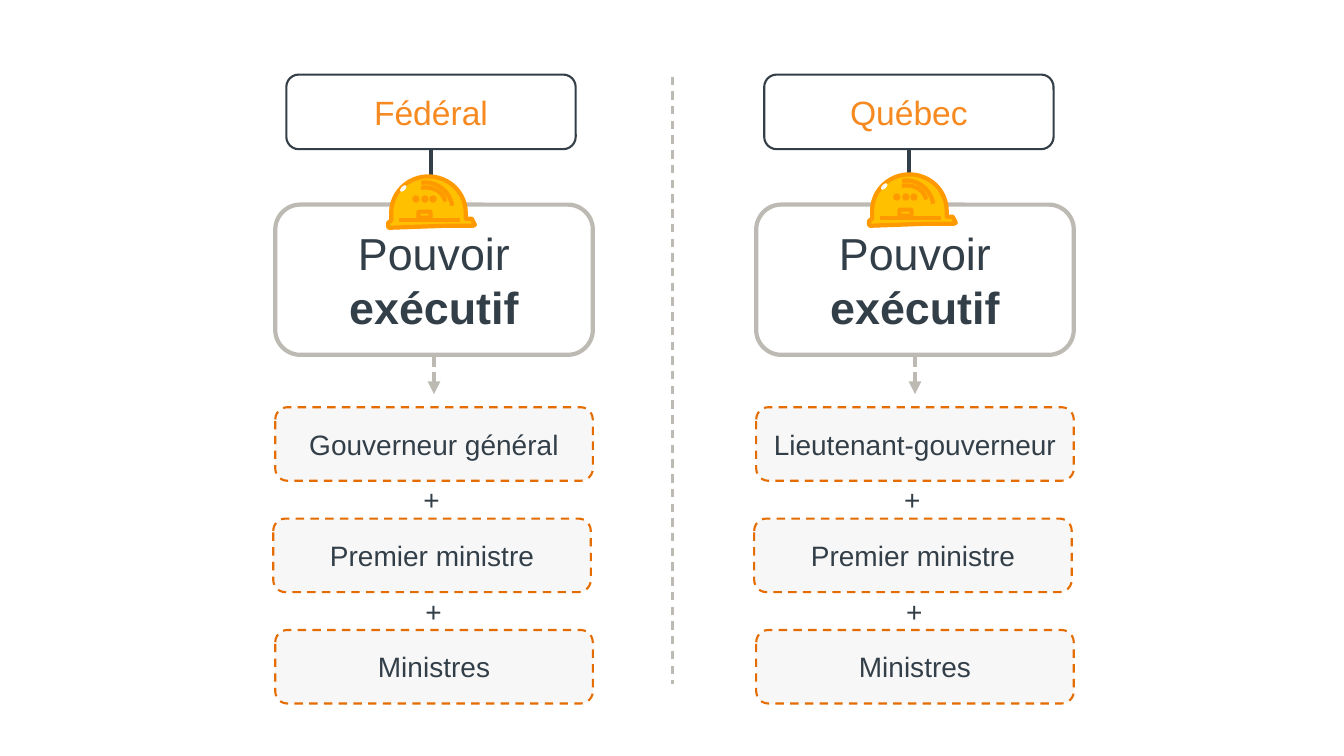
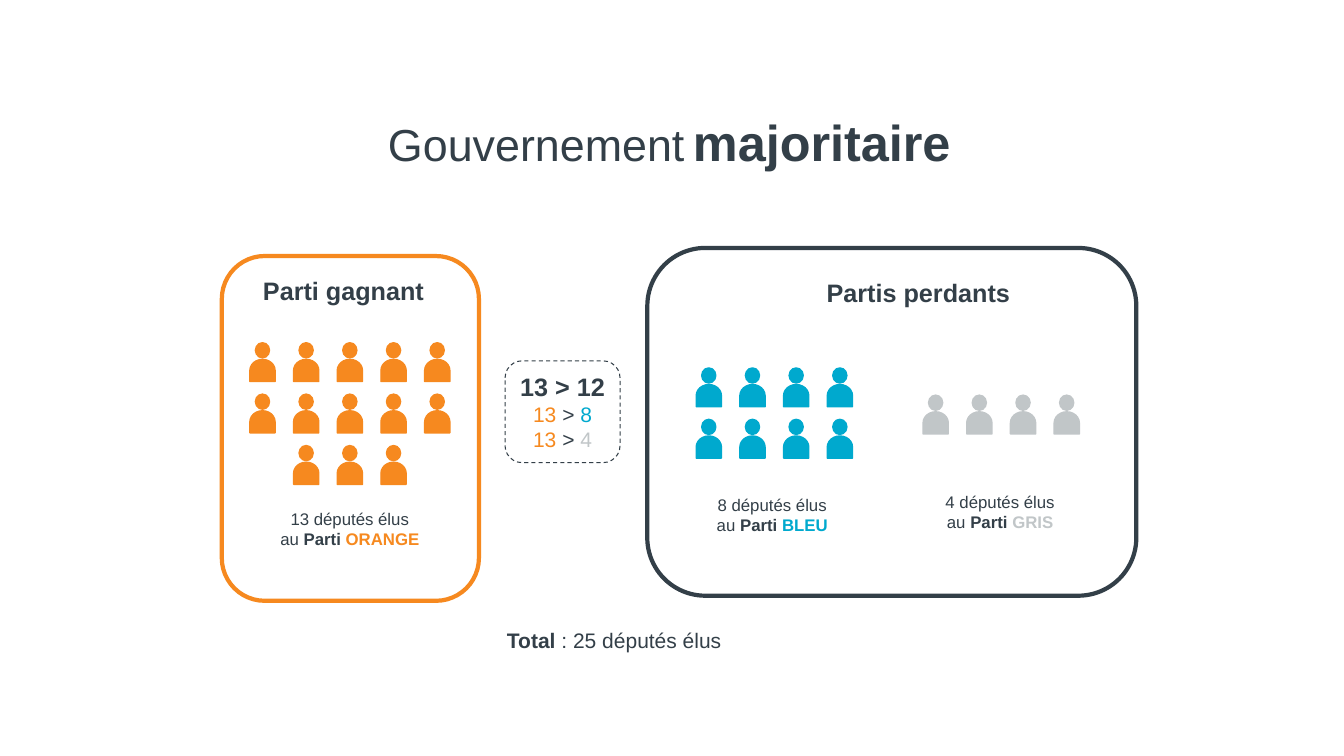
from math import cos, sin, pi
from pptx import Presentation
from pptx.dml.color import RGBColor as RGB
from pptx.enum.dml import MSO_LINE as DASH
from pptx.enum.shapes import MSO_CONNECTOR as CONN, MSO_SHAPE as SHAPE
from pptx.enum.text import MSO_ANCHOR as ANCHOR, PP_ALIGN as ALIGN
from pptx.oxml.ns import qn
from pptx.util import Inches, Pt
from lxml.etree import SubElement

INK = {"dark": "333F48", "orange": "F6891F", "rust": "E46C00", "stone": "BCBAB3",
       "pale": "F7F7F7", "white": "FFFFFF", "blue": "00A9CE", "gray": "C1C6C8",
       "gold": "FFC000", "amber": "FF9900"}
FONT = "Arial"


def box(slide, kind, at, fill=None, line=None, width=1, dash=None, rot=0,
        text=(), size=12, color="dark", align=ALIGN.CENTER, wrap=True):
    at = [Inches(v) for v in at]
    if kind is None:
        shape = slide.shapes.add_textbox(*at)
    else:
        shape = slide.shapes.add_shape(kind, *at)
        shape.shadow.inherit = False
        shape.rotation = rot
        if fill:
            shape.fill.solid()
            shape.fill.fore_color.rgb = RGB.from_string(INK[fill])
        else:
            shape.fill.background()
        if line:
            shape.line.color.rgb = RGB.from_string(INK[line])
            shape.line.width = Pt(width)
            if dash:
                shape.line.dash_style = dash
        else:
            shape.line.fill.background()
    if text:
        frame = shape.text_frame
        frame.word_wrap = wrap
        frame.vertical_anchor = ANCHOR.MIDDLE if kind else ANCHOR.TOP
        for i, runs in enumerate(text):
            para = frame.add_paragraph() if i else frame.paragraphs[0]
            para.alignment = align
            para.font.name = FONT
            para.font.color.rgb = RGB.from_string(INK[color])
            sizes = {run[3] for run in runs if len(run) > 3}
            if not sizes:
                para.font.size = Pt(size)
            elif len(runs) == 1:
                para.font.size = Pt(sizes.pop())
            bolds = {len(run) > 1 and run[1] for run in runs}
            if len(bolds) == 1:
                para.font.bold = bolds.pop()
            for word, bold, tint, pts in ((*run, None, None, None)[:4] for run in runs):
                run = para.add_run()
                run.text = word
                if bold and len(runs) > 1:
                    run.font.bold = True
                if tint:
                    run.font.color.rgb = RGB.from_string(INK[tint])
                if sizes and len(runs) > 1:
                    run.font.size = Pt(pts or size)
    return shape


def link(slide, start, end, color, width=3, dash=None, arrow=False, top=None):
    line = slide.shapes.add_connector(CONN.STRAIGHT, *[Inches(v) for v in (*start, *end)])
    if top is not None:
        line.begin_connect(top, 2)
    line.line.color.rgb = RGB.from_string(INK[color])
    line.line.width = Pt(width)
    if dash:
        line.line.dash_style = dash
    if arrow:
        SubElement(line.line._get_or_add_ln(), qn("a:tailEnd"), type="triangle")
    SubElement(line._element.spPr, qn("a:effectLst"))


prs = Presentation()
prs.slide_width, prs.slide_height = Inches(13.33), Inches(7.5)
blank = prs.slide_layouts[6]
ROUND, OVAL = SHAPE.ROUNDED_RECTANGLE, SHAPE.OVAL

power = prs.slides.add_slide(blank)
link(power, (6.67, 0.76), (6.67, 6.79), "stone", 1.5, DASH.DASH)

levels = [("Fédéral", 2.73, 2.84, "Gouverneur général"),
          ("Québec", 7.5, 7.58, "Lieutenant-gouverneur")]
for i, (name, left, head_x, chief) in enumerate(levels):
    mid = left + 3.15 / 2
    card = box(power, ROUND, (left, 2.03, 3.15, 1.49), "white", "stone", 3, size=32,
               text=[[("Pouvoir",)], [("exécutif", True)]])
    link(power, (mid, 3.52), (mid, 3.91), "stone", 3, DASH.SQUARE_DOT, True, card)

    for row, role in enumerate((chief, "Premier ministre", "Ministres")):
        y = 4.04 + row * 2.21 / 2
        x = left - 0.02 * (row == 1)
        box(power, ROUND, (x, y, 3.15, 0.73), "pale", "rust", 1.5, DASH.DASH,
            text=[[(role,)]], size=20)
        if row < 2:
            box(power, None, (left + 1.37 + 0.02 * row, y + 0.7, 0.36, 0.44),
                text=[[("+",)]], size=20, align=ALIGN.LEFT)

    head = box(power, ROUND, (head_x, 0.74, 2.87, 0.74), "white", "dark", 1.5,
               text=[[(name,)]], size=24, color="orange")
    stem = head_x + 2.87 / 2
    link(power, (stem, 1.48), (stem, 1.87), "dark", 3, arrow=True, top=head)

    dx, dy = 4.77 * i, -0.02 * i
    dome = [(4.25 - 0.37 * cos(pi * k / 24), 2.11 - 0.36 * sin(pi * k / 24))
            for k in range(25)]
    brim = [(4.62, 2.17), (4.68, 2.17), (4.71, 2.23), (4.69, 2.24), (4.42, 2.24),
            (4.14, 2.25), (3.86, 2.26), (3.85, 2.25), (3.85, 2.21), (3.88, 2.19)]
    edge = [(Inches(x + dx), Inches(y + dy)) for x, y in dome + brim]
    pen = power.shapes.build_freeform(*edge[0])
    pen.add_line_segments(edge[1:])
    hat = pen.convert_to_shape()
    hat.shadow.inherit = False
    hat.fill.solid()
    hat.fill.fore_color.rgb = RGB.from_string(INK["gold"])
    hat.line.color.rgb = RGB.from_string(INK["amber"])
    hat.line.width = Pt(3)

    link(power, (4.56 + dx, 2.18 + dy), (3.96 + dx, 2.18 + dy), "amber")
    parts = [(SHAPE.ARC, 3.96, 1.81, 0.53, 0.55, None, "amber", -9.6),
             (SHAPE.ARC, 3.99, 1.86, 0.43, 0.35, None, "amber", -9.6),
             (ROUND, 4.15, 2.1, 0.12, 0.06, "gold", "amber", 0),
             (OVAL, 3.98, 1.83, 0.04, 0.08, "white", None, 45)]
    parts += [(OVAL, x, 1.96, 0.03, 0.03, "gold", "amber", 0) for x in (4.11, 4.2, 4.28)]
    for kind, x, y, w, h, fill, line, rot in parts:
        box(power, kind, (x + dx, y + dy, w, h), fill, line, 3, rot=rot)

vote = prs.slides.add_slide(blank)
box(vote, ROUND, (6.42, 2.46, 4.85, 3.45), None, "dark", 3)
box(vote, ROUND, (2.2, 2.54, 2.55, 3.42), "white", "orange", 3)

labels = [
    ((3.75, 1.05, 5.83, 1.06), 32,
     [("Gouvernement",), (" ", False, None, 21), ("majoritaire", True, None, 36)]),
    ((2.51, 2.68, 1.81, 0.4), 18, [("Parti gagnant", True)]),
    ((8.1, 2.7, 2.04, 0.4), 18, [("Partis perdants", True)]),
    ((4.93, 6.18, 2.55, 0.35), 15, [("Total", True), (" : 25 députés élus",)])]
for at, size, runs in labels:
    box(vote, None, at, text=[runs], size=size, align=ALIGN.LEFT, wrap=False)

box(vote, ROUND, (5.01, 3.58, 1.14, 1.01), None, "dark", 0.75, DASH.DASH, size=15, wrap=False,
    text=[[("13 > 12", True, None, 18)],
          [("13", False, "orange"), (" > ",), ("8", False, "blue")],
          [("13", False, "orange"), (" > ",), ("4", False, "gray")]])

gap = 1.3 / 3
parties = [("ORANGE", "orange", (5, 5, 3), 3.4, 3.4, 3.47, 5),
           ("BLEU", "blue", (4, 4), 7.61, 3.65, 7.66, 4.86),
           ("GRIS", "gray", (4,), 9.86, 3.92, 9.92, 4.83)]
for name, tint, rows, mid, top, cap_x, cap_y in parties:
    for row, count in enumerate(rows):
        y = top + row * 0.51
        for col in range(count):
            x = mid + (col - (count - 1) / 2) * gap
            box(vote, OVAL, (x, y, 0.14, 0.15), tint, tint)
            box(vote, SHAPE.FLOWCHART_DELAY, (x - 0.04, y + 0.15, 0.22, 0.25), tint, tint, rot=270)
    box(vote, None, (cap_x - 1, cap_y, 2, 0.5),
        text=[[(f"{sum(rows)} députés élus",)],
              [("au ",), ("Parti ", True), (name, True, tint)]])

prs.save("out.pptx")
